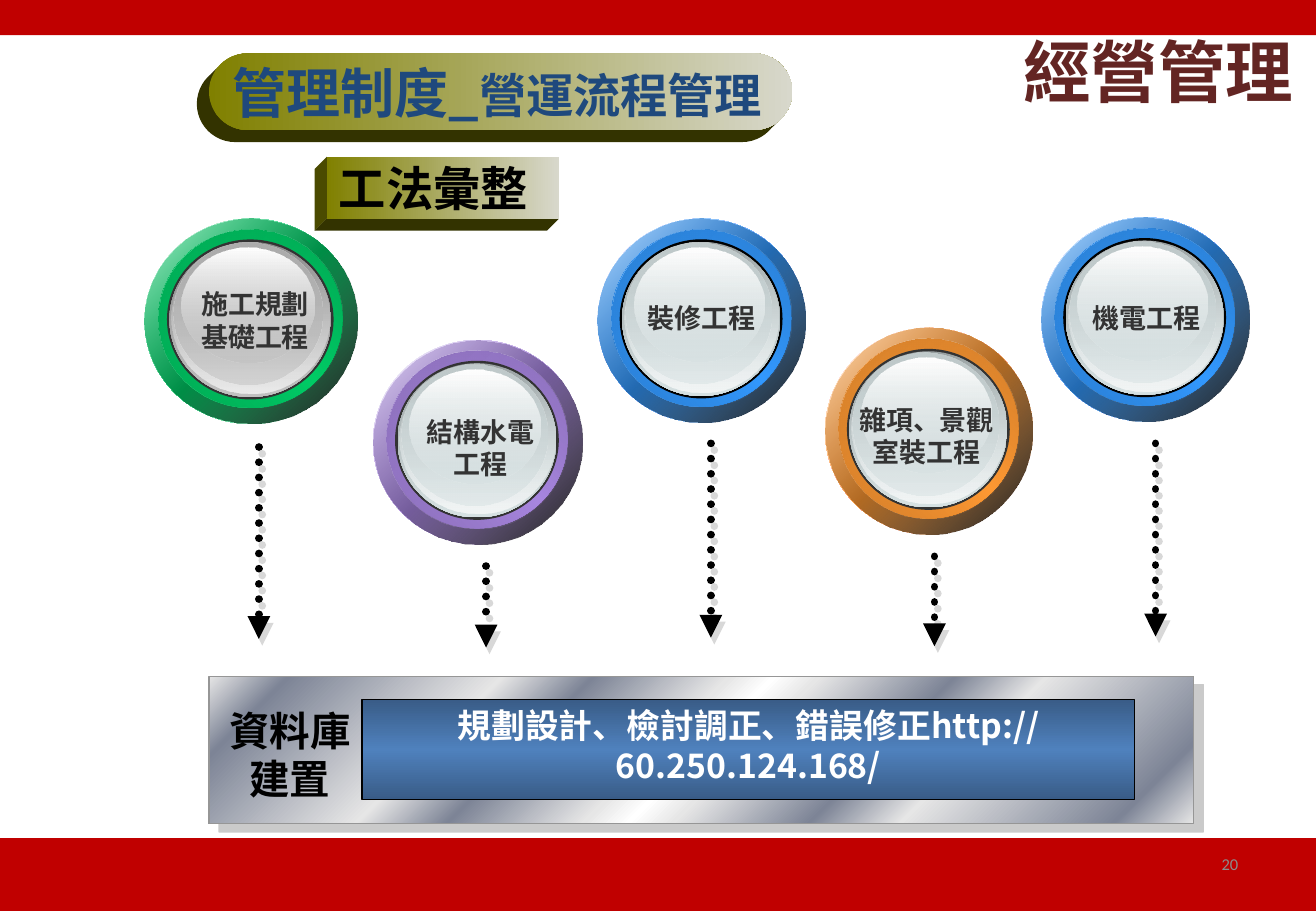
from lxml.etree import SubElement
from pptx import Presentation
from pptx.dml.color import RGBColor as RGB
from pptx.enum.dml import MSO_LINE_DASH_STYLE as DASH
from pptx.enum.shapes import MSO_CONNECTOR as CONN, MSO_SHAPE as SHAPE
from pptx.enum.text import MSO_ANCHOR as ANCHOR, PP_ALIGN as ALIGN
from pptx.oxml import parse_xml
from pptx.oxml.ns import nsdecls, qn
from pptx.util import Inches, Pt

C = {"red": "C00000", "white": "FFFFFF", "black": "000000", "ink": "333333",
     "maroon": "632523", "navy": "1F497D", "gray": "8C8C8C", "edge": "969696",
     "olive": "808000", "sand": "D8D8CC", "side": "4A4A00", "base": "333300",
     "silver": "E6E6E6", "steel": "7D8496", "blue": "4F81BD", "deep": "395C87",
     "arrow_shadow": "B2B2B2"}
HUES = {"purple": ("A886E0", "8167AC", "8A6EB8"),
        "blue": ("3399FF", "2775C3", "2A7ED1"),
        "orange": ("FF9933", "C37527", "D17E2A"),
        "green": ("00CC66", "009C4E", "00A754")}
GLASS = {"cool": ("D6E1E2", "99A1A2", "F2F5F5", "C1CBCC"),
         "plain": ("C0C0C0", "898989", "EBEBEB", "AEAEAE")}
CJK = "Noto Sans CJK SC"
SHADOW = ('<a:effectLst %s><a:outerShdw dist="{}" dir="{}" algn="ctr" rotWithShape="0">'
          '<a:srgbClr val="{}"><a:alpha val="50000"/></a:srgbClr></a:outerShdw></a:effectLst>' % nsdecls("a"))

prs = Presentation()
prs.slide_width, prs.slide_height = Inches(10.83), Inches(7.5)
s = prs.slides.add_slide(prs.slide_layouts[5])


def paint(sp, fill, angle=0):
    sp.shadow.inherit = False
    sp.line.fill.background()
    if isinstance(fill, str):
        sp.fill.solid()
        sp.fill.fore_color.rgb = RGB.from_string(fill)
        return sp
    sp.fill.gradient()
    sp.fill.gradient_angle = (360 - angle) % 360
    stops = sp._element.spPr.find(qn("a:gradFill")).find(qn("a:gsLst"))
    for old in list(stops):
        stops.remove(old)
    for pos, color, *opacity in fill:
        gs = SubElement(stops, qn("a:gs"), pos=str(pos * 1000))
        clr = SubElement(gs, qn("a:srgbClr"), val=color)
        if opacity:
            SubElement(clr, qn("a:alpha"), val=str(opacity[0] * 1000))
    return sp


def write(sp, text, size, color, align=ALIGN.CENTER, anchor=ANCHOR.TOP,
          wrap=True, shadow=None, bold=True, font=CJK):
    tf = sp.text_frame
    tf.text = text
    tf.word_wrap = wrap
    tf.vertical_anchor = anchor
    for p in tf.paragraphs:
        p.alignment = align
        for r in p.runs:
            r.font.size, r.font.bold, r.font.name = Pt(size), bold, font
            r.font.color.rgb = RGB.from_string(color)
            rPr = r.font._element
            rPr.find(qn("a:latin")).addnext(rPr.makeelement(qn("a:ea"), {"typeface": font}))
            if shadow:
                rPr.find(qn("a:solidFill")).addnext(parse_xml(SHADOW.format(25400, 2700000, shadow)))
    return tf


for top, height in ((6.9, 0.6), (0, 0.29)):
    paint(s.shapes.add_shape(SHAPE.RECTANGLE, 0, Inches(top), prs.slide_width, Inches(height)), C["red"])

title = s.shapes.title
title.left, title.top, title.width, title.height = map(Inches, (1.6, 0.27, 9.14, 0.71))
tf = write(title, "經營管理", 40, C["maroon"], ALIGN.RIGHT, ANCHOR.MIDDLE)
tf.paragraphs[0].line_spacing = 0.9

metal = [(0, C["silver"]), (7, C["steel"]), (26, C["silver"]), (34, C["steel"]),
         (46, C["silver"]), (50, C["white"]), (54, C["silver"]), (66, C["steel"]),
         (74, C["silver"]), (93, C["steel"]), (100, C["silver"])]
bar = [(0, C["deep"]), (50, C["blue"]), (100, C["deep"])]
for at, fill, angle, edge in (((1.72, 5.57, 8.1, 1.21), metal, 45, C["edge"]),
                              ((2.98, 5.76, 6.36, 0.82), bar, 90, C["black"])):
    sp = paint(s.shapes.add_shape(SHAPE.RECTANGLE, *map(Inches, at)), fill, angle)
    sp.line.color.rgb = RGB.from_string(edge)
    sp.line.width = Pt(0.75)
    if fill is metal:
        effects = sp._element.spPr.find(qn("a:effectLst"))
        effects.getparent().replace(effects, parse_xml(SHADOW.format(99060, 2400000, C["edge"])))

LAYERS = ((0, 0, 1.71, 1.68), (0, 0, 1.71, 1.68), (0.11, 0.09, 1.48, 1.46),
          (0.11, 0.09, 1.48, 1.46), (0.18, 0.17, 1.34, 1.31), (0.2, 0.19, 1.3, 1.27),
          (0.22, 0.19, 1.27, 1.24), (0.23, 0.2, 1.2, 1.16), (0.3, 0.24, 1.07, 0.94))
RINGS = (
    ((1.19, 1.8, 1.75, 1.69), "green", "plain", "ink", (2.13, 3.68, 5.26),
     "施工規劃\n基礎工程", (1.4, 2.32, 1.4, 0.64)),
    ((3.07, 2.8, 1.72, 1.68), "purple", "cool", "ink", (4, 4.66, 5.33),
     "結構水電工程", (3.39, 3.37, 1.13, 0.64)),
    ((4.92, 1.8, 1.71, 1.68), "blue", "cool", "black", (5.85, 3.65, 5.25),
     "裝修工程", (5.05, 2.43, 1.45, 0.37)),
    ((6.79, 2.7, 1.71, 1.7), "orange", "cool", "ink", (7.69, 4.58, 5.32),
     "雜項、景觀室裝工程", (6.97, 3.27, 1.31, 0.64)),
    ((8.57, 1.79, 1.71, 1.68), "blue", "cool", "black", (9.51, 3.65, 5.24),
     "機電工程", (8.71, 2.43, 1.45, 0.37)),
)
for (left, top, width, height), hue, glass, groove, (x, y1, y2), label, label_at in RINGS:
    main, dark, mid = HUES[hue]
    pane, low, glow, haze = GLASS[glass]
    fills = (
        ([(0, C["white"]), (50, main), (100, C["white"])], 45),
        ([(0, main, 32), (100, C["black"], 90)], 45),
        ([(0, dark), (50, main), (100, dark)], 315),
        ([(0, mid), (100, main, 0)], 45),
        (C[groove], 0),
        ([(0, low), (100, pane)], 90),
        ([(0, pane, 0), (100, glow)], 90),
        ([(0, haze), (100, pane, 48)], 90),
        ([(0, C["white"]), (100, pane, 38)], 90),
    )
    kx, ky = width / 1.71, height / 1.68
    ring = s.shapes.add_group_shape()
    for (dx, dy, w, h), (fill, angle) in zip(LAYERS, fills):
        at = (left + dx * kx, top + dy * ky, w * kx, h * ky)
        paint(ring.shapes.add_shape(SHAPE.OVAL, *map(Inches, at)), fill, angle)
    write(s.shapes.add_textbox(*map(Inches, label_at)), label, 16, C["ink"], shadow="C0C0C0")

    arrow = s.shapes.add_connector(CONN.STRAIGHT, *map(Inches, (x, y1, x, y2)))
    arrow.line.color.rgb = RGB.from_string(C["black"])
    arrow.line.width = Pt(4.5)
    arrow.line.dash_style = DASH.ROUND_DOT
    ln = arrow.line._get_or_add_ln()
    ln.set("cap", "rnd")
    SubElement(ln, qn("a:tailEnd"), type="triangle")
    arrow._element.spPr.append(parse_xml(SHADOW.format(57150, 3780000, C["arrow_shadow"])))

write(s.shapes.add_textbox(*map(Inches, (3.03, 5.75, 6.26, 0.77))),
      "規劃設計、檢討調正、錯誤修正http://60.250.124.168/", 20, C["white"], shadow=C["black"])
write(s.shapes.add_textbox(*map(Inches, (1.78, 5.76, 1.21, 0.91))),
      "資料庫\n建置", 24, C["black"], wrap=False, shadow="C0C0C0")
write(s.shapes.add_textbox(*map(Inches, (7.85, 6.91, 2.44, 0.4))),
      "20", 9.8, C["gray"], ALIGN.RIGHT, ANCHOR.MIDDLE, bold=False, font="Calibri")

olive = [(0, C["olive"]), (100, C["sand"])]
for color, points in (("side", ((2.69, 1.29), (2.59, 1.39), (2.59, 1.9), (2.69, 1.8))),
                      ("base", ((2.69, 1.8), (4.6, 1.8), (4.5, 1.9), (2.59, 1.9)))):
    corners = [(Inches(x), Inches(y)) for x, y in points]
    face = s.shapes.build_freeform(*corners[0])
    face.add_line_segments(corners[1:])
    paint(face.convert_to_shape(), C[color])
sp = paint(s.shapes.add_shape(SHAPE.RECTANGLE, *map(Inches, (2.69, 1.29, 1.91, 0.51))), olive)
write(sp, "工法彙整", 28, C["black"], ALIGN.LEFT, ANCHOR.MIDDLE, wrap=False)

for depth, fill in ((0.1, C["base"]), (0.05, C["base"]), (0, olive)):
    at = (1.72 - depth, 0.44 + depth, 4.8, 0.63)
    sp = paint(s.shapes.add_shape(SHAPE.ROUNDED_RECTANGLE, *map(Inches, at)), fill)
    sp.adjustments[0] = 0.5
tf = write(sp, "管理制度_", 32, C["navy"], ALIGN.LEFT, ANCHOR.MIDDLE, wrap=False)
r = tf.paragraphs[0].add_run()
r.text = "營運流程管理"
r.font.size, r.font.bold, r.font.name = Pt(28), True, CJK
r.font.color.rgb = RGB.from_string(C["navy"])
SubElement(r.font._element, qn("a:ea"), typeface=CJK)

prs.save("out.pptx")
